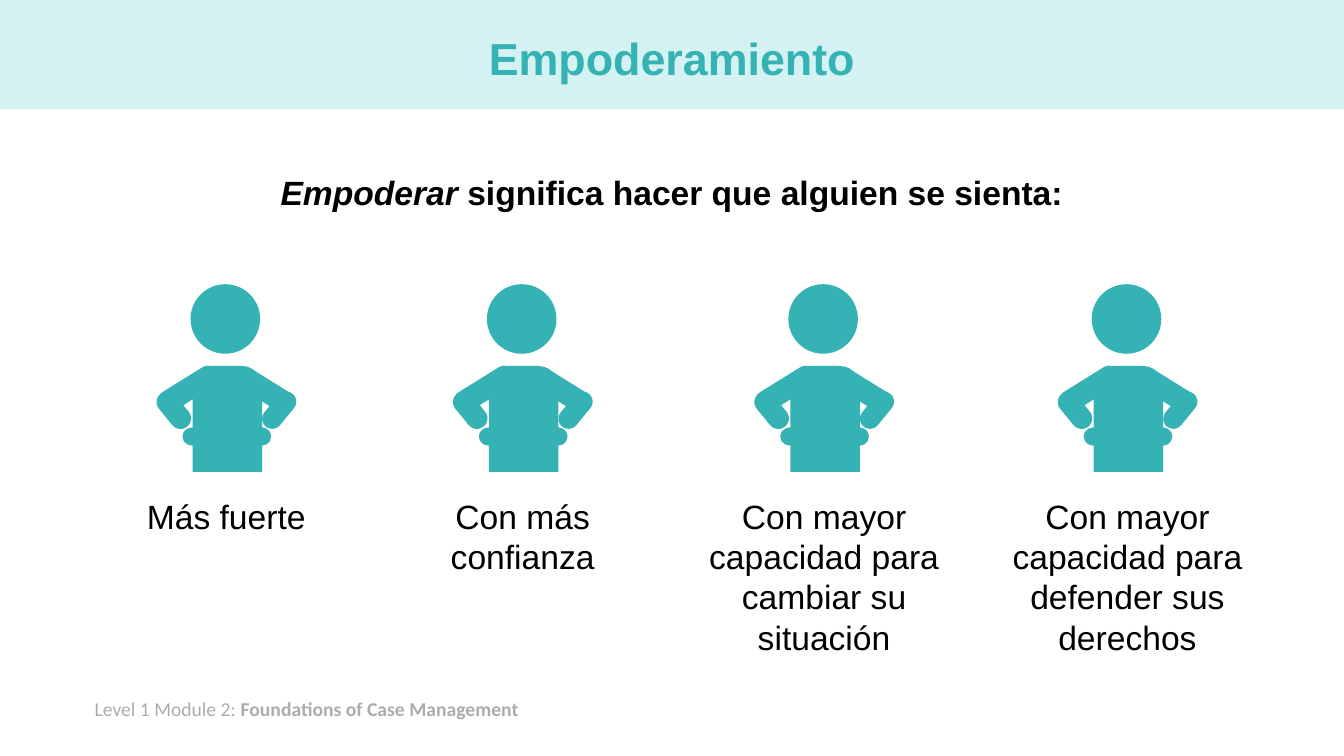
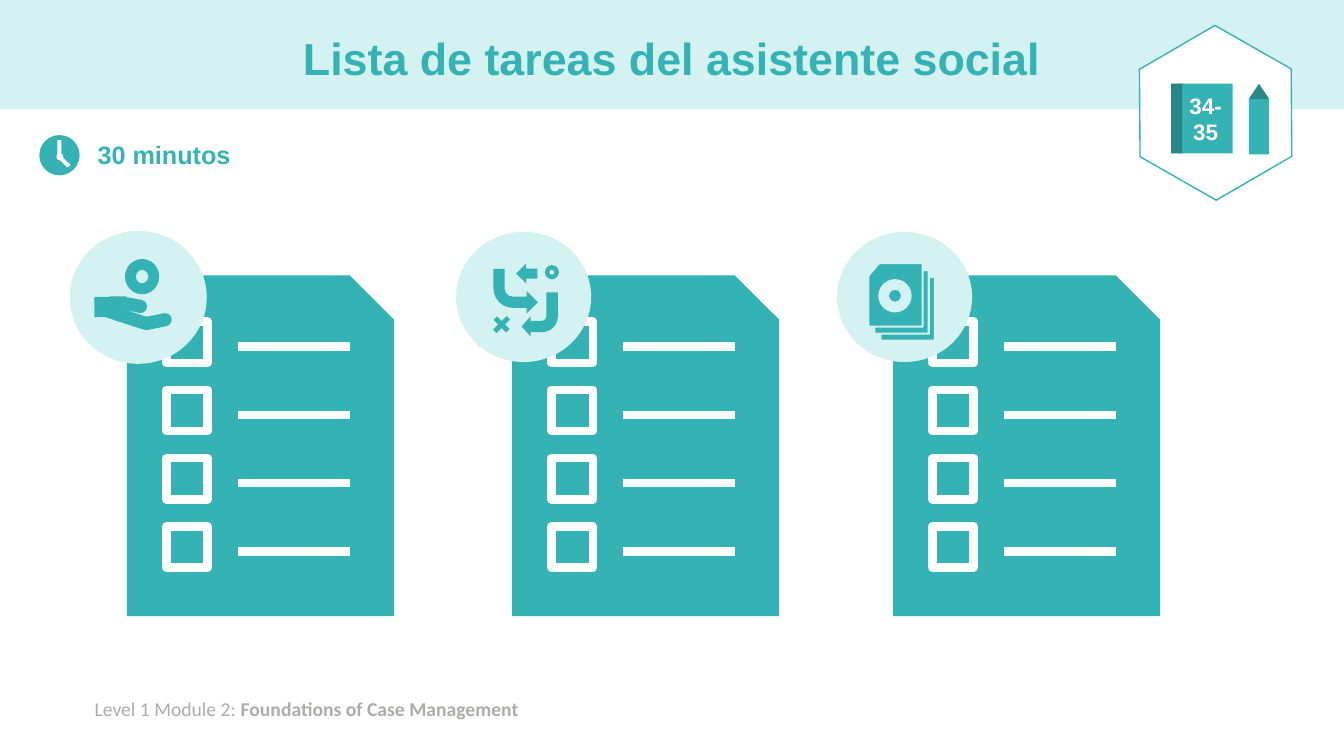
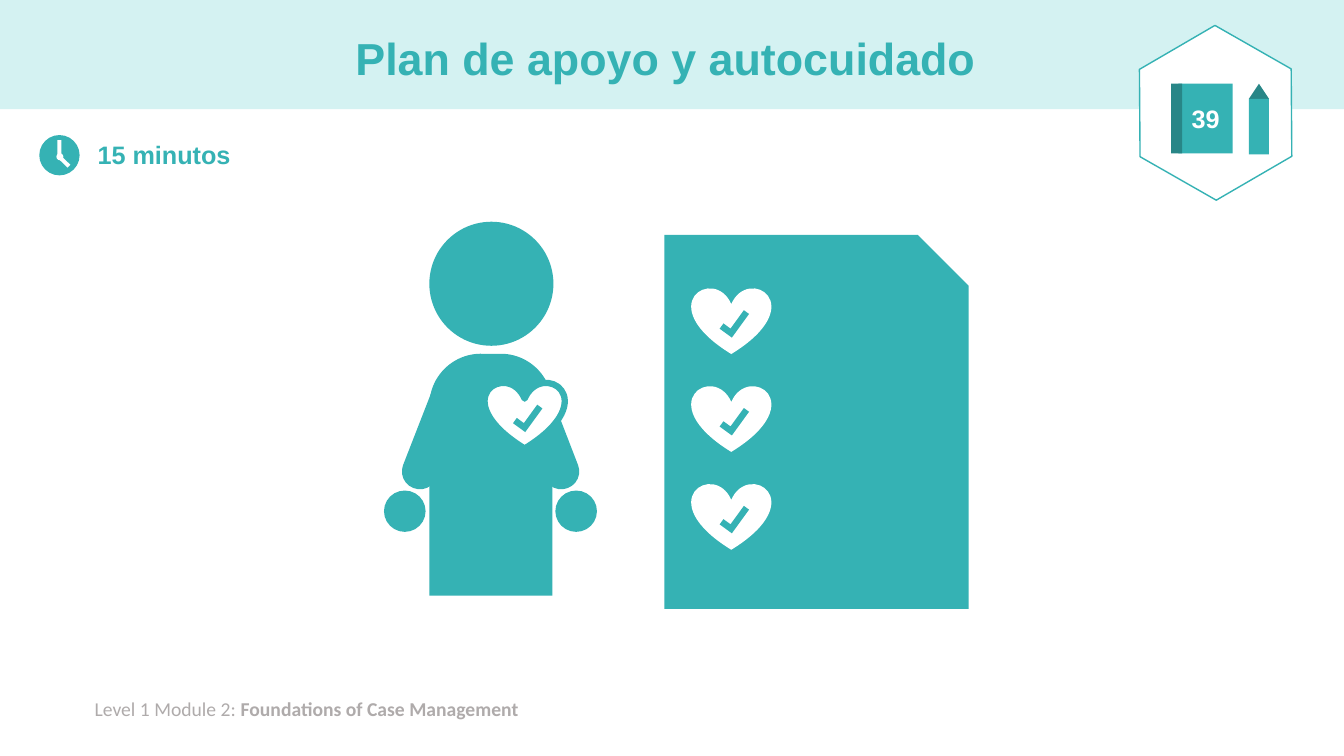
from lxml import etree
from pptx import Presentation
from pptx.dml.color import RGBColor
from pptx.enum.shapes import MSO_CONNECTOR, MSO_SHAPE
from pptx.enum.text import MSO_ANCHOR, PP_ALIGN
from pptx.oxml.ns import qn
from pptx.util import Pt

TEAL, PALE, DARK = "35B2B4", "D4F2F2", "288687"
WHITE, BLACK, GREY = "FFFFFF", "000000", "AFABAB"
WIDE, HIGH = 960, 540

RECT, OVAL, PILL = MSO_SHAPE.RECTANGLE, MSO_SHAPE.OVAL, MSO_SHAPE.ROUNDED_RECTANGLE
DOME, SNIP = MSO_SHAPE.ROUND_2_SAME_RECTANGLE, MSO_SHAPE.SNIP_1_RECTANGLE
HEX, PEAK, RING = MSO_SHAPE.HEXAGON, MSO_SHAPE.ISOSCELES_TRIANGLE, MSO_SHAPE.DONUT
HEART, ELL, PLUS = MSO_SHAPE.HEART, MSO_SHAPE.CORNER, MSO_SHAPE.MATH_PLUS
DOWN, BENT = MSO_SHAPE.DOWN_ARROW, MSO_SHAPE.BENT_ARROW
CUFF, CARD = MSO_SHAPE.FLOWCHART_MANUAL_INPUT, MSO_SHAPE.FLOWCHART_CARD
STRAIGHT = MSO_CONNECTOR.STRAIGHT
LEFT, MID = PP_ALIGN.LEFT, PP_ALIGN.CENTER
CENTRE = MSO_ANCHOR.MIDDLE


def tint(code):
    return RGBColor.from_string(code)


def paint(fill, code):
    if code:
        fill.solid()
        fill.fore_color.rgb = tint(code)
    else:
        fill.background()


def draw(shapes, at, kind, box, fill=TEAL, edge=None, weight=1, turn=0, adj=()):
    """Add a preset shape; box is left, top, width, height from the point at."""
    x, y, w, h = box
    shape = shapes.add_shape(kind, Pt(at[0] + x), Pt(at[1] + y), Pt(w), Pt(h))
    shape.shadow.inherit = False
    paint(shape.fill, fill)
    paint(shape.line.fill, edge)
    if edge:
        shape.line.width = Pt(weight)
    shape.rotation = turn
    for i, value in enumerate(adj):
        shape.adjustments[i] = value
    return shape


def rule(shapes, x, y, width):
    line = shapes.add_connector(STRAIGHT, Pt(x), Pt(y), Pt(x + width), Pt(y))
    line.line.color.rgb = tint(WHITE)
    line.line.width = Pt(6)
    etree.SubElement(line.element.spPr, qn("a:effectLst"))


def write(frame, runs, size, color, align=LEFT, font="Arial"):
    """Fill the first paragraph; runs are (text, bold, italic)."""
    para = frame.paragraphs[0]
    para.alignment = align
    for text, bold, italic in runs:
        run = para.add_run()
        run.text = text
        run.font.name = font
        run.font.size = Pt(size)
        run.font.bold = bold
        run.font.italic = italic
        run.font.color.rgb = tint(color)
    return para


def label(shapes, box, runs, size, color, align=LEFT, font="Arial"):
    text = shapes.add_textbox(*map(Pt, box))
    text.text_frame.word_wrap = True
    write(text.text_frame, runs, size, color, align, font)
    return text


def dress(layout, slide):
    """Put the band and the footer on the layout, behind its title."""
    band = draw(slide.shapes, (0, 0), RECT, (0, 0, WIDE, 78), PALE)
    foot = label(slide.shapes, (60.5, 494.6, 327.6, 24.5),
                 [("Level 1 Module 2: ", False, False),
                  ("Foundations of Case Management", True, False)],
                 14, GREY, font="Calibri")
    tree = layout.shapes.element
    for i, shape in enumerate((band, foot)):
        tree.insert(2 + i, shape.element)


def start(deck, layout, title):
    slide = deck.slides.add_slide(layout)
    head = slide.shapes.title
    head.left, head.top, head.width, head.height = map(Pt, (66, 9.4, 828, 68.4))
    head.text_frame.vertical_anchor = CENTRE
    para = write(head.text_frame, [(title, True, False)], 32, TEAL, MID)
    para.line_spacing = 0.9
    return slide


def badge(slide, x, y, pages, size):
    """Workbook and pencil in a hexagon."""
    group, at = slide.shapes.add_group_shape().shapes, (x, y)
    draw(group, at, HEX, (0, 0, 125.3, 108), WHITE, TEAL, turn=29.7, adj=[0.29])
    book = draw(group, at, RECT, (36, 33.2, 38.9, 49.7))
    book.text_frame.word_wrap = True
    book.text_frame.vertical_anchor = CENTRE
    write(book.text_frame, [(pages, True, False)], size, WHITE, MID)
    draw(group, at, RECT, (30.9, 33.2, 7.9, 49.7), DARK)
    draw(group, at, PEAK, (86.4, 33.2, 14.4, 10.8), DARK)
    draw(group, at, RECT, (86.4, 44, 14.4, 39.6))


def timer(slide, x, y, text):
    label(slide.shapes, (x + 34.5, y - 0.7, 123, 28.8), [(text, True, False)], 18, TEAL)
    group, at = slide.shapes.add_group_shape().shapes, (x, y)
    draw(group, at, OVAL, (0, 0, 28.8, 28.8))
    draw(group, at, OVAL, (12.2, 13, 5, 5), WHITE)
    draw(group, at, RECT, (8.6, 7.9, 11.5, 2.9), WHITE, turn=270)
    draw(group, at, RECT, (14.4, 18, 7.9, 2.9), WHITE, turn=224.2)


def task(deck, layout, title, time, pages, size):
    """Start a slide that has a timer and a workbook badge."""
    slide = start(deck, layout, title)
    badge(slide, 805.7, 26.6, pages, size)
    timer(slide, 28.1, 96.5, time)
    return slide


def proud(slide, x, y):
    """Person with hands on hips, 100 points wide."""
    group, at = slide.shapes.add_group_shape().shapes, (x, y)
    draw(group, at, DOME, (25.9, 58.4, 49.7, 75.6), adj=[0.291, 0])
    for box, turn in (((69.1, 51.9, 15.8, 46.8), 301.9),
                      ((80.6, 74.9, 14.4, 30.2), 219.3),
                      ((15.1, 50.4, 15.8, 49), 58.1),
                      ((5, 74.9, 15.1, 30.2), 140.7)):
        draw(group, at, DOME, box, turn=turn, adj=[0.5, 0.5])
    for box in ((69.1, 102.3, 13, 13), (18.7, 102.3, 13.7, 13),
                (24.5, 0, 49.7, 49.7)):
        draw(group, at, OVAL, box)


def heart(shapes, x, y, edge=None):
    at = (x, y)
    draw(shapes, at, HEART, (0, 0, 56.9, 47.5), WHITE, edge, 4.5)
    draw(shapes, at, ELL, (20.2, 18.7, 20.9, 10.8), turn=306, adj=[0.422, 0.433])


def person(slide, x, y):
    """Standing person with a heart on the chest."""
    group, at = slide.shapes.add_group_shape().shapes, (x, y)
    draw(group, at, DOME, (32.4, 94.3, 87.8, 172.8), adj=[0.419, 0])
    draw(group, at, OVAL, (32.4, 0, 88.6, 88.6))
    for arm, turn, hand in ((22.3, 201.3, 0), (104.4, 158.9, 122.4)):
        draw(group, at, DOME, (arm, 115, 25.6, 77.8), turn=turn, adj=[0.493, 0])
        draw(group, at, OVAL, (hand, 192, 29.7, 29.5))
    heart(group, x + 72, y + 114.5, TEAL)


def sheet(slide, x, y):
    """Page with four boxes to tick."""
    draw(slide.shapes, (x, y), SNIP, (0, 0, 190.8, 243.4))
    for i in range(4):
        drop = y + 48.8 * i
        draw(slide.shapes, (x, drop), RECT, (28.1, 33, 29.5, 29.5), None, WHITE, 6)
        rule(slide.shapes, x + 79.2, drop + 51, 80)


def give(shapes, at):
    """Open hand with a coin."""
    draw(shapes, at, OVAL, (-1, -0.7, 98, 95), PALE)
    for box, turn in (((37.9, 46.8, 9.4, 30.2), 107.9),
                      ((55.9, 52.6, 9.4, 23), 78.5),
                      ((39.3, 41.8, 9.4, 20.9), 100.2)):
        draw(shapes, at, PILL, box, turn=turn, adj=[0.5])
    draw(shapes, at, CUFF, (25.6, 43.9, 11.5, 18.7), turn=17.9)
    draw(shapes, at, RECT, (17.7, 45.4, 14.4, 16.6), turn=90)
    draw(shapes, at, RING, (38.6, 19.4, 24.5, 25.2), adj=[0.317])


def route(shapes, at):
    """Arrows that wind from a ring to a cross."""
    draw(shapes, at, OVAL, (0, 0, 96.5, 93), PALE)
    draw(shapes, at, DOWN, (43.2, 22.3, 14.4, 15.1), turn=90)
    bend = draw(shapes, at, BENT, (26.7, 26.6, 31.7, 31.7))
    bend.element.spPr.find(qn("a:xfrm")).set("flipV", "1")
    draw(shapes, at, BENT, (46.8, 43.2, 25.9, 31.7), turn=180,
         adj=[0.315, 0.282, 0.25, 0.438])
    draw(shapes, at, PLUS, (23.8, 56.9, 17.3, 18.7), turn=45, adj=[0.204])
    draw(shapes, at, RING, (63.4, 23.8, 10.1, 10.1), adj=[0.322])


def files(shapes, at):
    """Pile of three cards."""
    draw(shapes, at, OVAL, (0, 0, 96.5, 93), PALE)
    for i in (2, 1, 0):
        draw(shapes, at, CARD, (22.3 + 4.35 * i, 22.3 + 5.05 * i, 38.9, 45.4),
             TEAL, PALE, 1.5)
    draw(shapes, at, RING, (29.5, 33.8, 23.8, 23.8), PALE, adj=[0.322])


def power(deck, layout):
    slide = start(deck, layout, "Empoderamiento")
    label(slide.shapes, (102.2, 119.5, 755.3, 36),
          [("Empoderar", True, True),
           (" significa hacer que alguien se sienta:", True, False)],
          24, BLACK, MID)
    for x, text in ((111.6, "Más fuerte"),
                    (323.3, "Con más confianza"),
                    (538.6, "Con mayor capacidad para cambiar su situación"),
                    (755.3, "Con mayor capacidad para defender sus derechos")):
        proud(slide, x, 203)
        label(slide.shapes, (x - 42, 350.6, 184, 124), [(text, False, False)],
              24, BLACK, MID)
    return slide


def tasks(deck, layout):
    slide = task(deck, layout, "Lista de tareas del asistente social",
                 "30 minutos", "34-35", 16)
    for x, icon in ((90.7, give), (365.8, route), (637.9, files)):
        sheet(slide, x, 196.6)
        icon(slide.shapes.add_group_shape().shapes, (x - 40, 165.6))


def care(deck, layout):
    slide = task(deck, layout, "Plan de apoyo y autocuidado ", "15 minutos", "39", 18)
    person(slide, 274.3, 158.4)
    x, y = 474.5, 167.8
    draw(slide.shapes, (x, y), SNIP, (0, 0, 217.4, 267.1))
    for i in range(3):
        heart(slide.shapes.add_group_shape().shapes, x + 19.4, y + 37.6 + 69.9 * i)


def main():
    deck = Presentation()
    deck.slide_width, deck.slide_height = Pt(WIDE), Pt(HIGH)
    layout = deck.slide_layouts[5]
    first = power(deck, layout)
    tasks(deck, layout)
    care(deck, layout)
    dress(layout, first)
    deck.save("out.pptx")


if __name__ == "__main__":
    main()
